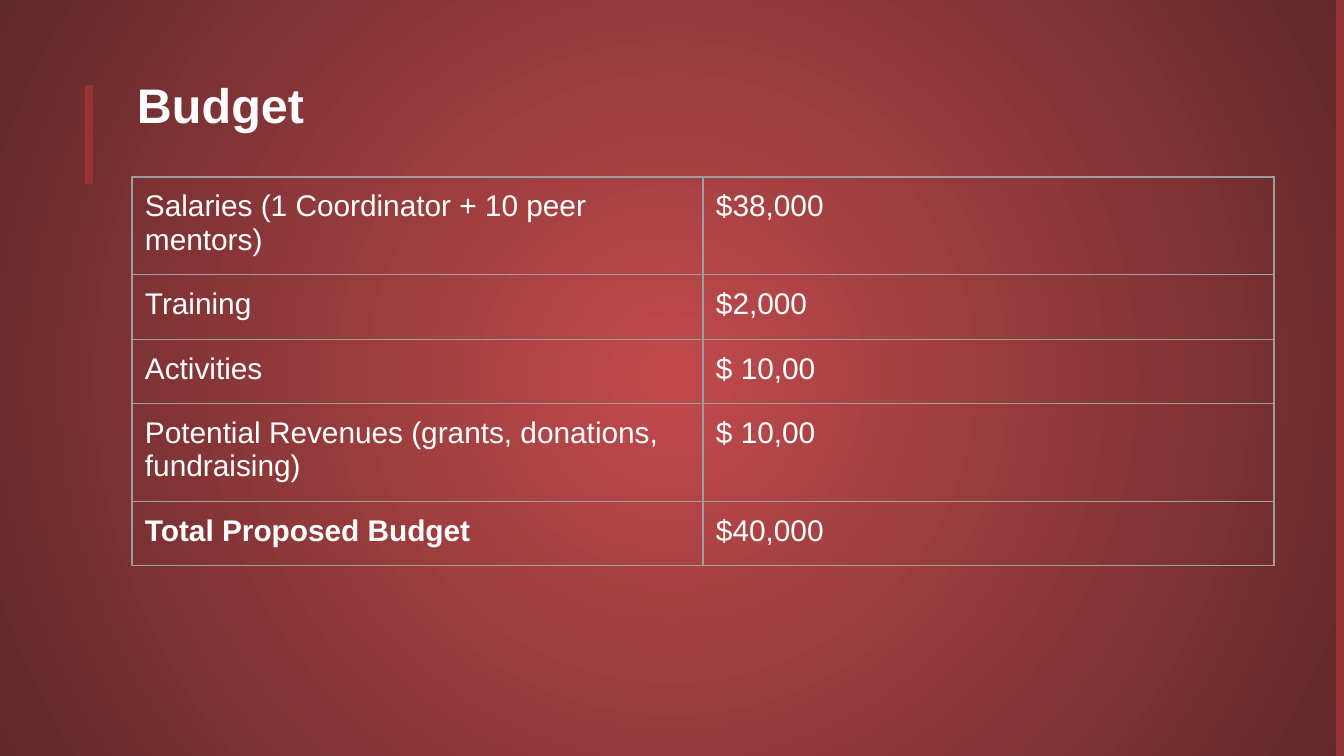
import dataclasses

import lxml.etree
import pptx
import pptx.dml.color
import pptx.enum.shapes
import pptx.oxml.ns
import pptx.util

EMU_PER_PX = 914400 / 134.4
WIDTH, HEIGHT = 1344, 756
INSET = 13


@dataclasses.dataclass(frozen=True)
class Theme:
    font: str = "Arial"
    text: str = "FFFFFF"
    accent: str = "963334"
    glow: str = "C14A4C"
    edge: str = "612829"
    border: str = "9E9E9E"
    title_size: int = 26
    table_size: int = 16
    border_width: float = 0.75


def px(length):
    return pptx.util.Emu(round(length * EMU_PER_PX))


def rgb(color):
    return pptx.dml.color.RGBColor.from_string(color)


def add_xml(parent, tag, **attributes):
    return lxml.etree.SubElement(parent, pptx.oxml.ns.qn(tag), attributes)


def write_text(frame, text, *, font, size, color, bold=False):
    frame.word_wrap = True
    para = frame.paragraphs[0]
    span = para.add_run()
    span.text = text
    span.font.name = font
    span.font.size = pptx.util.Pt(size)
    span.font.bold = bold
    span.font.color.rgb = rgb(color)


class SlideBuilder:
    def __init__(self, page, theme):
        self.page = page
        self.theme = theme

    def background(self):
        fill = self.page.background.fill
        fill.gradient()
        colors = (self.theme.glow, self.theme.edge)
        for stop, color, position in zip(fill.gradient_stops, colors, (0, 1)):
            stop.color.rgb = rgb(color)
            stop.position = position
        gradient = self.page.background._cSld.find(
            ".//" + pptx.oxml.ns.qn("a:gradFill"))
        gradient.remove(gradient.find(pptx.oxml.ns.qn("a:lin")))
        circle = add_xml(gradient, "a:path", path="circle")
        add_xml(circle, "a:fillToRect", **dict.fromkeys("ltrb", "50000"))

    def bar(self, left, top, width, height):
        bar = self.page.shapes.add_shape(
            pptx.enum.shapes.MSO_SHAPE.RECTANGLE,
            px(left), px(top), px(width), px(height))
        bar.shadow.inherit = False
        bar.fill.solid()
        bar.fill.fore_color.rgb = rgb(self.theme.accent)
        bar.line.fill.background()

    def title(self, text, left, top, width, height):
        box = self.page.shapes.add_textbox(
            px(left), px(top), px(width), px(height))
        frame = box.text_frame
        frame.margin_left = frame.margin_right = px(INSET)
        frame.margin_top = frame.margin_bottom = px(INSET)
        write_text(frame, text, font=self.theme.font,
                   size=self.theme.title_size, color=self.theme.text, bold=True)

    def cell_borders(self, cell):
        properties = cell._tc.get_or_add_tcPr()
        width = str(pptx.util.Pt(self.theme.border_width))
        for side in "LRTB":
            line = add_xml(properties, f"a:ln{side}", w=width)
            add_xml(add_xml(line, "a:solidFill"), "a:srgbClr",
                    val=self.theme.border)

    def table(self, rows, left, top, column_width, row_heights):
        columns = len(rows[0])
        table = self.page.shapes.add_table(
            len(rows), columns, px(left), px(top),
            px(column_width * columns), px(sum(row_heights))).table
        table.first_row = table.horz_banding = False
        for column in table.columns:
            column.width = px(column_width)
        for row, height, texts in zip(table.rows, row_heights, rows):
            row.height = px(height)
            for cell, text in zip(row.cells, texts):
                cell.margin_left = cell.margin_right = px(INSET)
                cell.margin_top = cell.margin_bottom = px(INSET)
                self.cell_borders(cell)
                cell.fill.background()
                write_text(cell.text_frame, text, font=self.theme.font,
                           size=self.theme.table_size, color=self.theme.text,
                           bold=text.startswith("Total"))


BUDGET = [
    ("Salaries (1 Coordinator + 10 peer mentors)", "$38,000"),
    ("Training", "$2,000"),
    ("Activities", "$ 10,00"),
    ("Potential Revenues (grants, donations, fundraising)", "$ 10,00"),
    ("Total Proposed Budget", "$40,000"),
]


def main():
    deck = pptx.Presentation()
    deck.slide_width, deck.slide_height = px(WIDTH), px(HEIGHT)
    page = deck.slides.add_slide(deck.slide_layouts[6])
    builder = SlideBuilder(page, Theme())
    builder.background()
    builder.bar(85, 85, 8, 99)
    builder.bar(WIDTH - 8, 0, 8, HEIGHT)
    builder.title("Budget", 124, 62, 474, 126)
    builder.table(BUDGET, 132, 177, 571, (92, 65, 64, 98, 64))
    deck.save("out.pptx")


if __name__ == "__main__":
    main()
